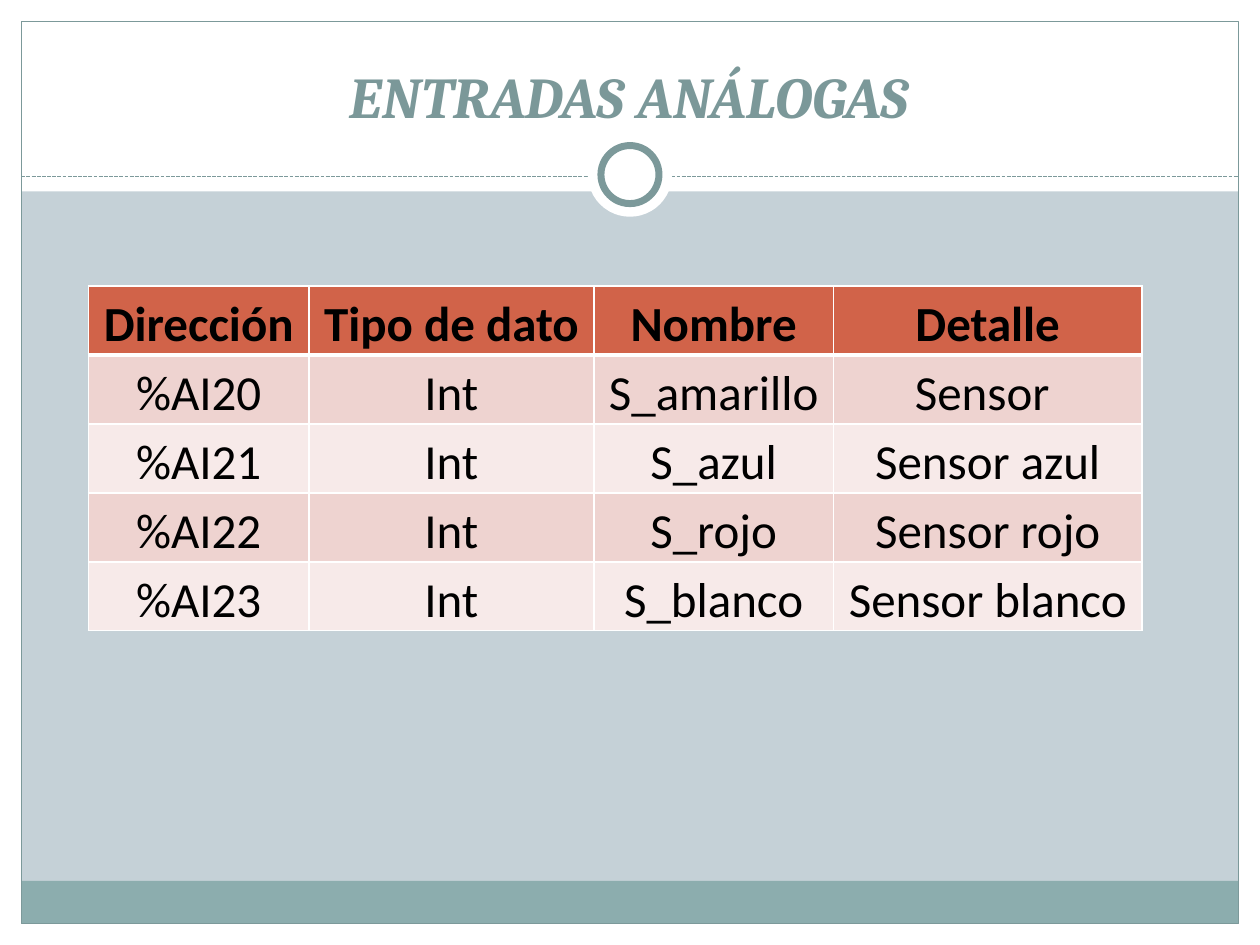
from dataclasses import dataclass

from lxml import etree
from pptx import Presentation
from pptx.dml.color import RGBColor
from pptx.enum.dml import MSO_LINE
from pptx.enum.shapes import MSO_CONNECTOR, MSO_SHAPE
from pptx.enum.text import MSO_ANCHOR, MSO_AUTO_SIZE, PP_ALIGN
from pptx.oxml.ns import qn
from pptx.slide import Slide
from pptx.table import _Cell
from pptx.text.text import TextFrame
from pptx.util import Cm, Pt

RECT, OVAL = MSO_SHAPE.RECTANGLE, MSO_SHAPE.OVAL
STRAIGHT, DASH = MSO_CONNECTOR.STRAIGHT, MSO_LINE.SQUARE_DOT
CENTER = PP_ALIGN.CENTER
BOTTOM = MSO_ANCHOR.BOTTOM
NO_FIT = MSO_AUTO_SIZE.NONE


@dataclass(frozen=True)
class Theme:
    back: str = "C5D1D7"
    white: str = "FFFFFF"
    black: str = "000000"
    edge: str = "7C999A"
    foot: str = "8CADAE"
    title: str = "7B9899"
    head: str = "D16349"
    bands: tuple[str, str] = ("EED3D0", "F7EAE9")
    serif: str = "Cambria"
    sans: str = "Calibri"
    title_size: float = 33
    cell_size: float = 28
    thin: float = 0.75
    ring: float = 4
    grid: float = 1
    rule: float = 3


@dataclass(frozen=True)
class Block:
    left: float
    top: float
    width: float
    height: float
    fill: str | None = None
    line: str | None = None
    weight: float = 0
    kind: int = RECT


THEME = Theme()
WIDTH, HEIGHT, EDGE = 25.4, 19.05, 0.43
INNER = WIDTH - 2 * EDGE
RULE_Y, RING_Y = 3.56, 3.52
FOOT = 0.86


def disc(size: float, line: str | None = None, weight: float = 0) -> Block:
    """White circle centred on the header rule."""
    return Block((WIDTH - size) / 2, RING_Y - size / 2, size, size,
                 THEME.white, line, weight, OVAL)


FRAME = (
    Block(0, HEIGHT - EDGE, WIDTH, EDGE, THEME.white),
    Block(0, 0, WIDTH, 3.86, THEME.white),
    Block(0, 0, EDGE, HEIGHT, THEME.white),
    Block(WIDTH - EDGE, 0, EDGE, HEIGHT, THEME.white),
    Block(EDGE, HEIGHT - EDGE - FOOT, INNER, FOOT, THEME.foot),
    Block(EDGE, EDGE, INNER, HEIGHT - 2 * EDGE, None, THEME.edge, THEME.thin),
)
DISCS = (disc(1.7), disc(1.17, THEME.edge, THEME.ring))

COLS = (4.45, 5.74, 4.83, 6.22)
ROW = 1.04
ROWS = (
    ("Dirección", "Tipo de dato", "Nombre", "Detalle"),
    ("%AI20", "Int", "S_amarillo", "Sensor "),
    ("%AI21", "Int", "S_azul", "Sensor azul"),
    ("%AI22", "Int", "S_rojo", "Sensor rojo"),
    ("%AI23", "Int", "S_blanco", "Sensor blanco"),
)


def color(code: str) -> RGBColor:
    return RGBColor.from_string(code)


def draw_block(slide: Slide, block: Block) -> None:
    shape = slide.shapes.add_shape(block.kind, Cm(block.left), Cm(block.top),
                                   Cm(block.width), Cm(block.height))
    shape.shadow.inherit = False
    if block.fill:
        shape.fill.solid()
        shape.fill.fore_color.rgb = color(block.fill)
    else:
        shape.fill.background()
    if block.line:
        shape.line.color.rgb = color(block.line)
        shape.line.width = Pt(block.weight)
    else:
        shape.line.fill.background()


def draw_rule(slide: Slide) -> None:
    rule = slide.shapes.add_connector(STRAIGHT, Cm(EDGE), Cm(RULE_Y),
                                      Cm(WIDTH - EDGE), Cm(RULE_Y))
    rule.line.color.rgb = color(THEME.edge)
    rule.line.width = Pt(THEME.thin)
    rule.line.dash_style = DASH
    etree.SubElement(rule.element.spPr, qn("a:effectLst"))


def write(frame: TextFrame, text: str, face: str, size: float, ink: str,
          bold: bool, italic: bool = False) -> None:
    para = frame.paragraphs[0]
    para.alignment = CENTER
    run = para.add_run()
    run.text = text
    font = run.font
    font.name, font.size = face, Pt(size)
    font.bold, font.italic = bold, italic
    font.color.rgb = color(ink)


def draw_title(slide: Slide, text: str) -> None:
    title = slide.shapes.title
    title.left, title.top = Cm(0.84), Cm(0.64)
    title.width, title.height = Cm(23.7), Cm(2.11)
    frame = title.text_frame
    frame.word_wrap, frame.auto_size = True, NO_FIT
    frame.vertical_anchor = BOTTOM
    write(frame, text, THEME.serif, THEME.title_size, THEME.title, True, True)
    # The placeholder comes first in the tree; bring it above the header band.
    title.element.getparent().append(title.element)


def set_edges(cell: _Cell, top: float, bottom: float) -> None:
    """Add white cell borders, ahead of the fill as the schema asks."""
    props = cell._tc.get_or_add_tcPr()
    sides = (("L", THEME.grid), ("R", THEME.grid), ("T", top), ("B", bottom))
    for spot, (side, weight) in enumerate(sides):
        line = etree.Element(qn(f"a:ln{side}"), w=str(Pt(weight)))
        fill = etree.SubElement(line, qn("a:solidFill"))
        etree.SubElement(fill, qn("a:srgbClr"), val=THEME.white)
        props.insert(spot, line)


def draw_table(slide: Slide) -> None:
    table = slide.shapes.add_table(len(ROWS), len(COLS), Cm(1.78), Cm(5.77),
                                   Cm(sum(COLS)), Cm(ROW * len(ROWS))).table
    for col, width in zip(table.columns, COLS):
        col.width = Cm(width)
    for r, texts in enumerate(ROWS):
        head = r == 0
        shade = THEME.head if head else THEME.bands[(r - 1) % 2]
        top = THEME.rule if r == 1 else THEME.grid
        bottom = THEME.rule if head else THEME.grid
        for c, text in enumerate(texts):
            cell = table.cell(r, c)
            cell.fill.solid()
            cell.fill.fore_color.rgb = color(shade)
            cell.vertical_anchor = BOTTOM
            cell.margin_left = cell.margin_right = Cm(0.18)
            cell.margin_top = cell.margin_bottom = 0
            cell.text_frame.paragraphs[0].line_spacing = 1.15
            write(cell.text_frame, text, THEME.sans, THEME.cell_size,
                  THEME.black, head)
            set_edges(cell, top, bottom)


def main() -> None:
    deck = Presentation()
    deck.slide_width, deck.slide_height = Cm(WIDTH), Cm(HEIGHT)
    slide = deck.slides.add_slide(deck.slide_layouts.get_by_name("Title Only"))
    slide.background.fill.solid()
    slide.background.fill.fore_color.rgb = color(THEME.back)
    for block in FRAME:
        draw_block(slide, block)
    draw_rule(slide)
    for block in DISCS:
        draw_block(slide, block)
    draw_title(slide, "ENTRADAS ANÁLOGAS")
    draw_table(slide)
    deck.save("out.pptx")


if __name__ == "__main__":
    main()
